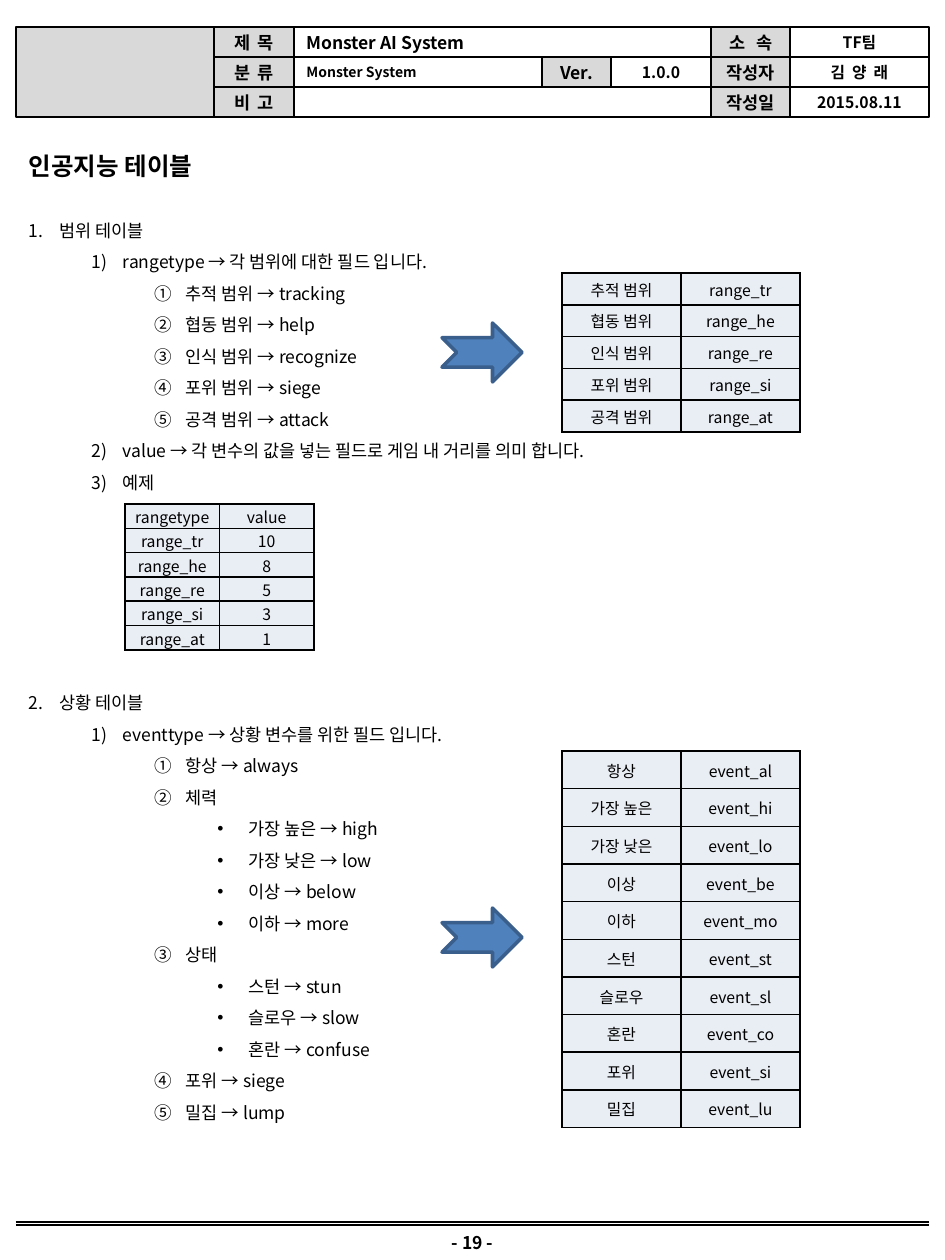
from lxml.etree import SubElement
from pptx import Presentation
from pptx.dml.color import RGBColor
from pptx.enum.shapes import MSO_CONNECTOR as Connector, MSO_SHAPE as Shape
from pptx.enum.text import MSO_ANCHOR as Anchor, MSO_AUTO_SIZE as AutoSize, PP_ALIGN as Align
from pptx.oxml.ns import qn
from pptx.util import Inches, Pt

PX = Inches(1) // 126
FONT = "Noto Sans CJK KR"
COLORS = {
    "ink": "000000",
    "label": "D9D9D9",
    "cell": "E9EDF4",
    "arrow": "4F81BD",
    "arrow_edge": "3A5F8C",
}
BULLETS = ["arabicPeriod", "arabicParenR", "circleNumDbPlain", None]

HEADER_TOP, HEADER_ROW = 27, 30
HEADER = [
    (0, 214, 294, "제 목", dict(fill="label", spacing=100)),
    (0, 294, 711, "Monster AI System", dict(align=Align.LEFT)),
    (0, 711, 790, "소 속", dict(fill="label", spacing=200)),
    (0, 790, 929, "TF팀", dict(size=9)),
    (1, 214, 294, "분 류", dict(fill="label", spacing=100)),
    (1, 294, 542, "Monster System", dict(size=8, align=Align.LEFT)),
    (1, 542, 611, "Ver.", dict(fill="label")),
    (1, 611, 711, "1.0.0", dict(size=9)),
    (1, 711, 790, "작성자", dict(fill="label")),
    (1, 790, 929, "김 양 래", dict(size=9, spacing=100)),
    (2, 214, 294, "비 고", dict(fill="label", spacing=100)),
    (2, 294, 711, "", {}),
    (2, 711, 790, "작성일", dict(fill="label")),
    (2, 790, 929, "2015.08.11", dict(size=9)),
]

OUTLINE = [
    (0, "범위 테이블", {}),
    (1, "rangetype → 각 범위에 대한 필드 입니다.", {}),
    (2, "추적 범위 → tracking", {}),
    (2, "협동 범위 → help", {}),
    (2, "인식 범위 → recognize", {}),
    (2, "포위 범위 → siege", {}),
    (2, "공격 범위 → attack", {}),
    (1, "value → 각 변수의 값을 넣는 필드로 게임 내 거리를 의미 합니다.", {}),
    (1, "예제", {}),
    (0, "상황 테이블", dict(start=2, before=108)),
    (1, "eventtype → 상황 변수를 위한 필드 입니다.", {}),
    (2, "항상 → always", {}),
    (2, "체력", {}),
    (3, "가장 높은 → high", {}),
    (3, "가장 낮은 → low", {}),
    (3, "이상 → below", {}),
    (3, "이하 → more", {}),
    (2, "상태", {}),
    (3, "스턴 → stun", {}),
    (3, "슬로우 → slow", {}),
    (3, "혼란 → confuse", {}),
    (2, "포위 → siege", {}),
    (2, "밀집 → lump", {}),
]

RANGE_NAMES = [
    ("추적 범위", "range_tr"),
    ("협동 범위", "range_he"),
    ("인식 범위", "range_re"),
    ("포위 범위", "range_si"),
    ("공격 범위", "range_at"),
]
RANGE_EXAMPLE = [
    ("rangetype", "value"),
    ("range_tr", "10"),
    ("range_he", "8"),
    ("range_re", "5"),
    ("range_si", "3"),
    ("range_at", "1"),
]
EVENT_NAMES = [
    ("항상", "event_al"),
    ("가장 높은", "event_hi"),
    ("가장 낮은", "event_lo"),
    ("이상", "event_be"),
    ("이하", "event_mo"),
    ("스턴", "event_st"),
    ("슬로우", "event_sl"),
    ("혼란", "event_co"),
    ("포위", "event_si"),
    ("밀집", "event_lu"),
]


def color(name):
    return RGBColor.from_string(COLORS[name])


def write(paragraph, text, size=10, bold=False, align=Align.LEFT, spacing=0, line=None):
    paragraph.alignment = align
    if line:
        paragraph.line_spacing = Pt(line)
    run = paragraph.add_run()
    run.text = text
    font = run.font
    font.name, font.size, font.bold = FONT, Pt(size), bold
    font.color.rgb = color("ink")
    properties = run._r.get_or_add_rPr()
    SubElement(properties, qn("a:ea"), typeface=FONT)
    if spacing:
        properties.set("spc", str(spacing))


class Page:
    def __init__(self, presentation):
        self.slide = presentation.slides.add_slide(presentation.slide_layouts[5])
        self.shapes = self.slide.shapes

    def title(self, text, *box):
        title = self.shapes.title
        title.left, title.top, title.width, title.height = (value * PX for value in box)
        title.text_frame.auto_size = AutoSize.NONE
        title.text_frame.vertical_anchor = Anchor.MIDDLE
        write(title.text_frame.paragraphs[0], text, size=14, bold=True, line=25)

    def shape(self, kind, *box, fill=None, edge="ink", weight=1.5):
        shape = self.shapes.add_shape(kind, *(value * PX for value in box))
        shape.shadow.inherit = False
        if fill:
            shape.fill.solid()
            shape.fill.fore_color.rgb = color(fill)
        else:
            shape.fill.background()
        shape.line.color.rgb = color(edge)
        shape.line.width = Pt(weight)
        return shape

    def field(self, text, *box, fill=None, align=Align.CENTER, **style):
        frame = self.shape(Shape.RECTANGLE, *box, fill=fill).text_frame
        frame.vertical_anchor = Anchor.MIDDLE
        if text:
            write(frame.paragraphs[0], text, bold=True, align=align, **style)

    def arrow(self, left, top):
        self.shape(Shape.NOTCHED_RIGHT_ARROW, left, top, 80, 59,
                   fill="arrow", edge="arrow_edge", weight=2)

    def rule(self, left, right, y):
        rule = self.shapes.add_connector(Connector.STRAIGHT, left * PX, y * PX, right * PX, y * PX)
        rule.line.color.rgb = color("ink")
        rule.line.width = Pt(1)
        SubElement(rule._element.spPr, qn("a:effectLst"))

    def text_box(self, *box, anchor=Anchor.TOP):
        frame = self.shapes.add_textbox(*(value * PX for value in box)).text_frame
        frame.word_wrap = True
        frame.vertical_anchor = anchor
        return frame

    def outline(self, entries, *box):
        frame = self.text_box(*box)
        for index, (level, text, options) in enumerate(entries):
            paragraph = frame.add_paragraph() if index else frame.paragraphs[0]
            paragraph.level = level
            properties = paragraph._p.get_or_add_pPr()
            properties.set("marL", str(Inches(0.25 + 0.5 * level)))
            properties.set("indent", str(-Inches(0.25)))
            if BULLETS[level]:
                number = SubElement(properties, qn("a:buAutoNum"), type=BULLETS[level])
                if "start" in options:
                    number.set("startAt", str(options["start"]))
            else:
                SubElement(properties, qn("a:buFont"), typeface="Arial")
                SubElement(properties, qn("a:buChar"), char="•")
            if "before" in options:
                paragraph.space_before = Pt(options["before"])
            write(paragraph, text, line=18)

    def table(self, rows, left, top, width, height):
        box = (value * PX for value in (left, top, width, height))
        table = self.shapes.add_table(len(rows), len(rows[0]), *box).table
        table.first_row = table.horz_banding = False
        for row, texts in zip(table.rows, rows):
            row.height = height * PX // len(rows)
            for cell, text in zip(row.cells, texts):
                cell.margin_left = cell.margin_right = cell.margin_top = PX
                cell.margin_bottom = 0
                cell.vertical_anchor = Anchor.MIDDLE
                properties = cell._tc.get_or_add_tcPr()
                for side in ("lnL", "lnR", "lnT", "lnB"):
                    border = SubElement(properties, qn(f"a:{side}"), w=str(Pt(1)))
                    fill = SubElement(border, qn("a:solidFill"))
                    SubElement(fill, qn("a:srgbClr"), val=COLORS["ink"])
                cell.fill.solid()
                cell.fill.fore_color.rgb = color("cell")
                write(cell.text_frame.paragraphs[0], text, size=9, align=Align.CENTER)


def main():
    presentation = Presentation()
    presentation.slide_width, presentation.slide_height = Inches(7.5), Inches(10)
    page = Page(presentation)

    page.field("", 16, HEADER_TOP, 198, 3 * HEADER_ROW, fill="label")
    for row, left, right, text, style in HEADER:
        page.field(text, left, HEADER_TOP + row * HEADER_ROW, right - left, HEADER_ROW, **style)
    for y in (1222, 1225):
        page.rule(16, 929, y)
    footer = page.text_box(423, 1225, 99, 35, anchor=Anchor.MIDDLE)
    write(footer.paragraphs[0], "- 19 -", bold=True, align=Align.CENTER)

    page.title("인공지능 테이블", 16, 134, 912, 49)
    page.outline(OUTLINE, 16, 203, 912, 1002)
    page.table(RANGE_NAMES, 562, 273, 238, 159)
    page.table(RANGE_EXAMPLE, 125, 504, 189, 146)
    page.table(EVENT_NAMES, 562, 751, 238, 377)
    for top in (323, 908):
        page.arrow(442, top)

    presentation.save("out.pptx")


if __name__ == "__main__":
    main()
